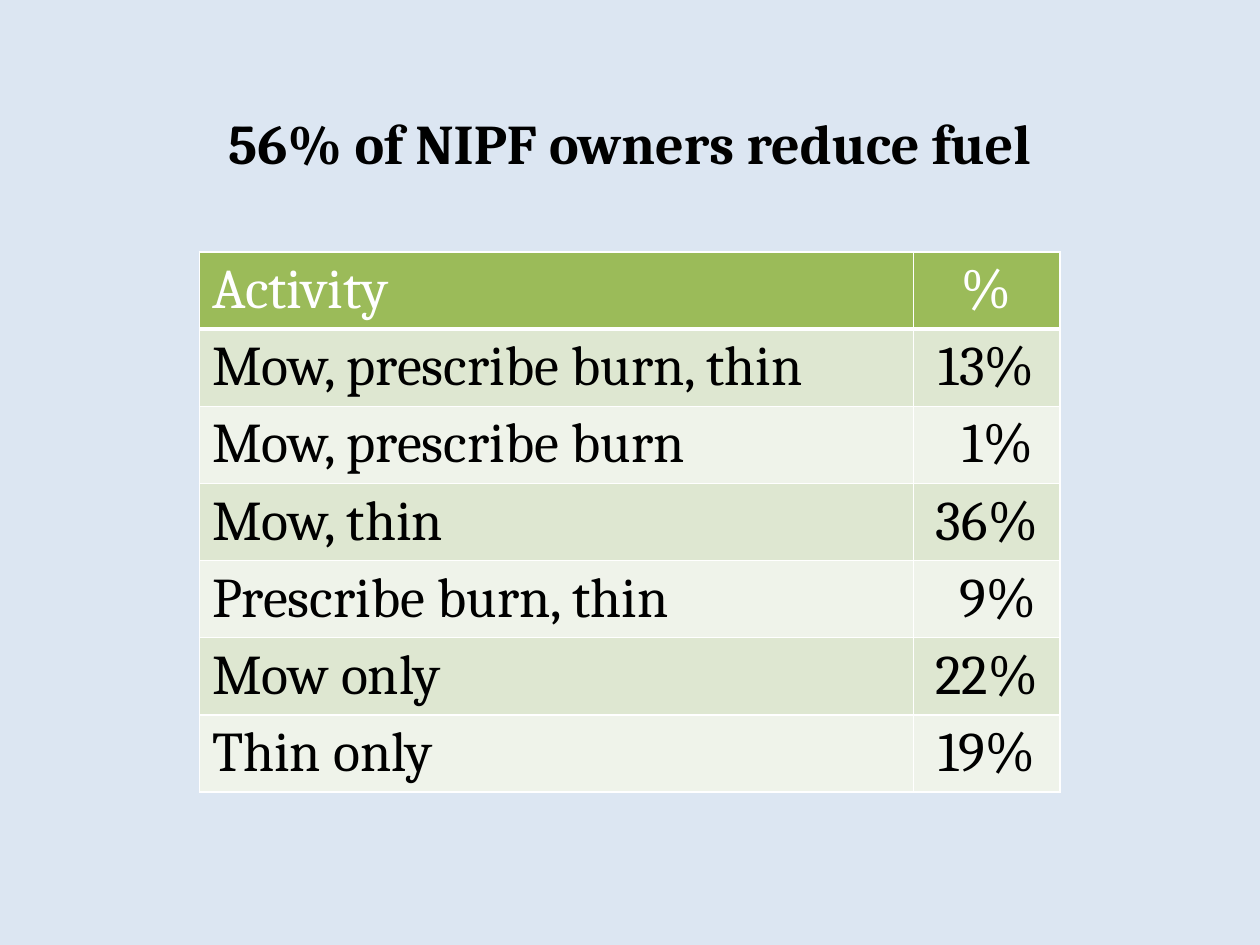
from dataclasses import dataclass

from lxml import etree
from pptx import Presentation
from pptx.dml.color import RGBColor
from pptx.enum.text import MSO_ANCHOR, PP_ALIGN
from pptx.oxml.ns import qn
from pptx.util import Cm, Pt

LEFT, CENTER = PP_ALIGN.LEFT, PP_ALIGN.CENTER
MIDDLE = MSO_ANCHOR.MIDDLE


@dataclass(frozen=True)
class Theme:
    background: str = "DCE6F2"
    header: str = "9BBB59"
    bands: tuple = ("DEE7D1", "EFF3EA")
    border: str = "FFFFFF"
    header_text: str = "FFFFFF"
    text: str = "000000"
    font: str = "Cambria"
    size: int = 32
    border_width: int = 1
    header_rule: int = 3


THEME = Theme()
TITLE = "56% of NIPF owners reduce fuel"
ROWS = [
    ("Activity", "%"),
    ("Mow, prescribe burn, thin", "13%"),
    ("Mow, prescribe burn", "1%"),
    ("Mow, thin", "36%"),
    ("Prescribe burn, thin", "9%"),
    ("Mow only", "22%"),
    ("Thin only", "19%"),
]
COLUMN_WIDTHS = (Cm(14.4), Cm(2.95))
ROW_HEIGHT = Cm(1.35)
ONE_DIGIT_MARGIN = Cm(0.7)


def write_text(frame, text, color, align, bold=False):
    para = frame.paragraphs[0]
    para.alignment = align
    span = para.add_run()
    span.text = text
    formats = {"name": THEME.font, "size": Pt(THEME.size), "bold": bold}
    for name, value in formats.items():
        setattr(span.font, name, value)
    span.font.color.rgb = RGBColor.from_string(color)


def add_title(page):
    box = page.shapes.add_textbox(Cm(1.27), Cm(1.27), Cm(22.86), Cm(3.18))
    box.text_frame.word_wrap = True
    box.text_frame.vertical_anchor = MIDDLE
    write_text(box.text_frame, TITLE, THEME.text, CENTER, bold=True)


def set_borders(cell, bottom_width):
    """Draw the four cell edges; call before the fill, which follows them in the XML."""
    properties = cell._tc.get_or_add_tcPr()
    widths = dict.fromkeys(("lnL", "lnR", "lnT"), THEME.border_width)
    widths["lnB"] = bottom_width
    for edge, width in widths.items():
        line = etree.SubElement(properties, qn(f"a:{edge}"), w=str(Pt(width)))
        fill = etree.SubElement(line, qn("a:solidFill"))
        etree.SubElement(fill, qn("a:srgbClr"), val=THEME.border)


def style_cell(cell, row):
    is_header = row == 0
    set_borders(cell, THEME.header_rule if is_header else THEME.border_width)
    cell.fill.solid()
    color = THEME.header if is_header else THEME.bands[(row - 1) % 2]
    cell.fill.fore_color.rgb = RGBColor.from_string(color)


def add_activity_table(page):
    table = page.shapes.add_table(
        len(ROWS), len(COLUMN_WIDTHS), Cm(4.02), Cm(5.08),
        sum(COLUMN_WIDTHS), ROW_HEIGHT * len(ROWS)).table
    for column, width in zip(table.columns, COLUMN_WIDTHS):
        column.width = width
    for row, texts in enumerate(ROWS):
        table.rows[row].height = ROW_HEIGHT
        color = THEME.text if row else THEME.header_text
        for column, (text, align) in enumerate(zip(texts, (LEFT, CENTER))):
            cell = table.cell(row, column)
            style_cell(cell, row)
            write_text(cell.text_frame, text, color, align)
            if len(text) == 2:  # line up one-digit shares with the others
                cell.margin_left = ONE_DIGIT_MARGIN


def main():
    deck = Presentation()
    deck.slide_width, deck.slide_height = Cm(25.4), Cm(19.05)
    page = deck.slides.add_slide(deck.slide_layouts[6])
    page.background.fill.solid()
    page.background.fill.fore_color.rgb = RGBColor.from_string(THEME.background)
    add_activity_table(page)
    add_title(page)
    deck.save("out.pptx")


if __name__ == "__main__":
    main()
